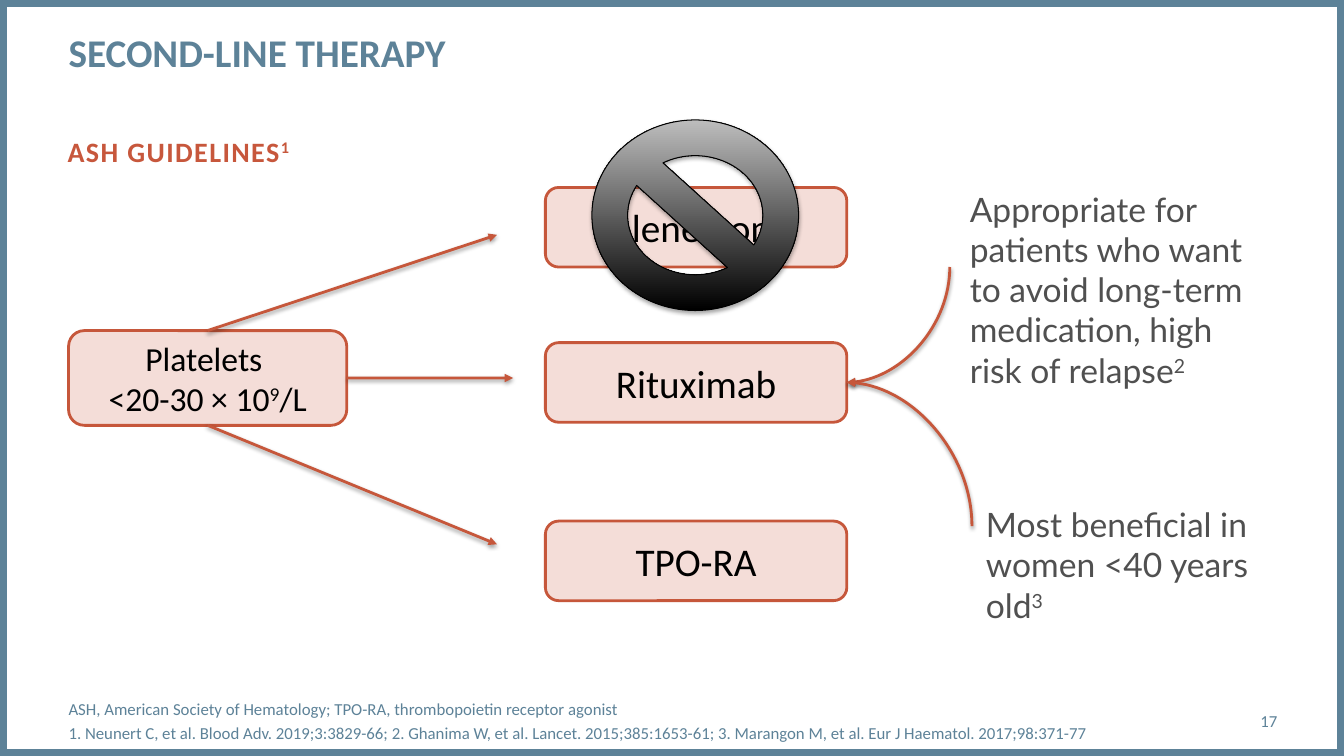
import lxml.etree
import pptx
import pptx.dml.color
import pptx.enum.dml
import pptx.enum.shapes
import pptx.enum.text
import pptx.oxml
import pptx.oxml.ns
import pptx.util

RGBColor = pptx.dml.color.RGBColor
SHAPE = pptx.enum.shapes.MSO_SHAPE
CONNECTOR = pptx.enum.shapes.MSO_CONNECTOR
ALIGN = pptx.enum.text.PP_ALIGN
ANCHOR = pptx.enum.text.MSO_ANCHOR

BLUE = RGBColor(0x5D, 0x82, 0x98)
RUST = RGBColor(0xC6, 0x57, 0x3B)
HEADING_RUST = RGBColor(0xC7, 0x57, 0x3C)
PINK = RGBColor(0xF4, 0xDD, 0xD8)
GREY = RGBColor(0x50, 0x50, 0x50)
SILVER = RGBColor(0xBD, 0xBD, 0xBD)
BLACK = RGBColor(0, 0, 0)

WIDTH = pptx.util.Inches(13.33)
HEIGHT = pptx.util.Inches(7.5)

# Shares of the slide, in percent
LEFT = 5.1
FOOTER_TOP, FOOTER_HEIGHT = 92.67, 5.33
THERAPY_LEFT, THERAPY_WIDTH, THERAPY_HEIGHT = 40.58, 22.43, 10.53
THERAPIES = [("Splenectomy", 24.8), ("Rituximab", 45.33), ("TPO-RA", 68.93)]
# Side of the platelets box, then the arrow tip
ARROWS = [(0, 36.98, 31.07), (3, 38.18, 50), (2, 36.98, 72)]
# Curve end, then the note's position, size and text
NOTES = [
    ((70.67, 35.33), (71.42, 24.27, 23.18, 28.27),
     "Appropriate for patients who want to avoid long-term medication, "
     "high risk of relapse^2"),
    ((72.32, 69.6), (72.62, 66, 24.68, 12.13),
     "Most beneficial in women <40 years old^3"),
]


def across(share):
    return round(WIDTH * share / 100)


def down(share):
    return round(HEIGHT * share / 100)


def place(left, top, width, height):
    return across(left), down(top), across(width), down(height)


def write(paragraph, text, size, color, font="Calibri", bold=False):
    """Write text in which ^ switches superscript on and off."""
    for index, part in enumerate(text.split("^")):
        if index == 0:
            paragraph.text = part
            continue
        run = paragraph.add_run()
        run.text = part
        if index % 2:
            run.font._element.set("baseline", "30000")
    for run in paragraph.runs:
        run.font.size = pptx.util.Pt(size)
        run.font.name = font
        run.font.bold = bold
        run.font.color.rgb = color


def add_text(slide, box, lines, size, color, font="Calibri", bold=False,
             inset=False, anchor=ANCHOR.TOP, align=ALIGN.LEFT, after=0):
    text_frame = slide.shapes.add_textbox(*place(*box)).text_frame
    text_frame.word_wrap = True
    text_frame.vertical_anchor = anchor
    if not inset:
        text_frame.margin_left = text_frame.margin_right = 0
        text_frame.margin_top = text_frame.margin_bottom = 0
    text_frame.text = "\n".join(lines)
    for paragraph, line in zip(text_frame.paragraphs, lines):
        write(paragraph, line, size, color, font, bold)
        paragraph.alignment = align
        paragraph.space_after = pptx.util.Pt(after)
    return text_frame


def add_box(slide, box, text, size):
    shape = slide.shapes.add_shape(SHAPE.ROUNDED_RECTANGLE, *place(*box))
    shape.shadow.inherit = False
    shape.fill.solid()
    shape.fill.fore_color.rgb = PINK
    shape.line.color.rgb = RUST
    shape.line.width = pptx.util.Pt(2)
    shape.text_frame.word_wrap = True
    shape.text_frame.vertical_anchor = ANCHOR.MIDDLE
    paragraph = shape.text_frame.paragraphs[0]
    write(paragraph, text, size, BLACK)
    paragraph.alignment = ALIGN.CENTER
    return shape


def add_shadow(shape, opacity, distance):
    properties = shape._element.spPr
    for effects in properties.findall(pptx.oxml.ns.qn("a:effectLst")):
        properties.remove(effects)
    properties.append(pptx.oxml.parse_xml(
        f'<a:effectLst {pptx.oxml.ns.nsdecls("a")}>'
        f'<a:outerShdw blurRad="{pptx.util.Pt(3.1)}" '
        f'dist="{pptx.util.Pt(distance)}" dir="5400000" rotWithShape="0">'
        f'<a:srgbClr val="000000"><a:alpha val="{opacity * 1000}"/></a:srgbClr>'
        '</a:outerShdw></a:effectLst>'))


def add_arrow(slide, kind, start, end, arrowhead):
    connector = slide.shapes.add_connector(kind, *start, *end)
    connector.line.color.rgb = RUST
    connector.line.width = pptx.util.Pt(2)
    line = connector.line._get_or_add_ln()
    head = lxml.etree.SubElement(line, pptx.oxml.ns.qn(arrowhead))
    head.set("type", "triangle")
    add_shadow(connector, 38, 1.6)
    return connector


def add_curve(slide, start, end):
    """Quarter curve that leaves its arrowhead end horizontally."""
    curve = add_arrow(slide, CONNECTOR.CURVE, start, end, "a:headEnd")
    geometry = curve._element.spPr.find(pptx.oxml.ns.qn("a:prstGeom"))
    geometry.set("prst", "curvedConnector2")


def add_frame(slide):
    frame = slide.shapes.add_shape(SHAPE.RECTANGLE, 0, 0, WIDTH, HEIGHT)
    frame.shadow.inherit = False
    frame.fill.background()
    frame.line.color.rgb = BLUE
    frame.line.width = pptx.util.Pt(10)


def add_no_sign(slide, box):
    sign = slide.shapes.add_shape(SHAPE.NO_SYMBOL, *place(*box))
    sign.fill.gradient()
    sign.fill.gradient_angle = 90
    for stop, color in zip(sign.fill.gradient_stops, (BLACK, SILVER)):
        stop.color.rgb = color
    sign.line.color.rgb = BLACK
    sign.line.width = pptx.util.Pt(0.75)
    add_shadow(sign, 35, 1.8)


def main():
    presentation = pptx.Presentation()
    presentation.slide_width = WIDTH
    presentation.slide_height = HEIGHT
    slide = presentation.slides.add_slide(presentation.slide_layouts[6])
    add_frame(slide)

    # Headings
    heading = add_text(slide, (5.03, 17.73, 90.02, 10.27), ["ASH GUIDELINES^1"],
                       20, HEADING_RUST, bold=True)
    for run in heading.paragraphs[0].runs:
        run.font._element.set("spc", "100")
    add_text(slide, (LEFT, 3.73, 71.72, 12.53), ["SECOND-LINE THERAPY"],
             28, BLUE, bold=True)

    # Platelet threshold and its arrows
    platelets = add_box(slide, (LEFT, 43.73, 20.7, 12.53),
                        "Platelets \v<20-30 × 10^9^/L", 24)
    for side, tip_left, tip_top in ARROWS:
        tip = across(tip_left), down(tip_top)
        arrow = add_arrow(slide, CONNECTOR.STRAIGHT, tip, tip, "a:tailEnd")
        arrow.begin_connect(platelets, side)

    # Therapies, the first one ruled out
    boxes = {name: add_box(slide, (THERAPY_LEFT, top, THERAPY_WIDTH,
                                   THERAPY_HEIGHT), name, 28)
             for name, top in THERAPIES}
    add_no_sign(slide, (44.04, 15.87, 15.38, 25.2))

    # Notes that lead to rituximab
    rituximab = boxes["Rituximab"]
    target = (rituximab.left + rituximab.width,
              rituximab.top + rituximab.height // 2)
    for (left, top), box, text in NOTES:
        add_curve(slide, target, (across(left), down(top)))
        note = add_text(slide, box, [text], 24, GREY, font="Lato", inset=True)
        note.auto_size = pptx.enum.text.MSO_AUTO_SIZE.SHAPE_TO_FIT_TEXT

    # Footer
    add_text(slide, (LEFT, FOOTER_TOP, 76.82, FOOTER_HEIGHT), [
        "ASH, American Society of Hematology; TPO-RA, thrombopoietin receptor agonist",
        "1. Neunert C, et al. Blood Adv. 2019;3:3829-66; 2. Ghanima W, et al. Lancet. "
        "2015;385:1653-61; 3. Marangon M, et al. Eur J Haematol. 2017;98:371-77",
    ], 12, BLUE, anchor=ANCHOR.MIDDLE, after=3)
    add_text(slide, (86.27, FOOTER_TOP, 8.78, FOOTER_HEIGHT), ["17"], 12, BLUE,
             anchor=ANCHOR.MIDDLE, align=ALIGN.RIGHT)

    presentation.save("out.pptx")


if __name__ == "__main__":
    main()
